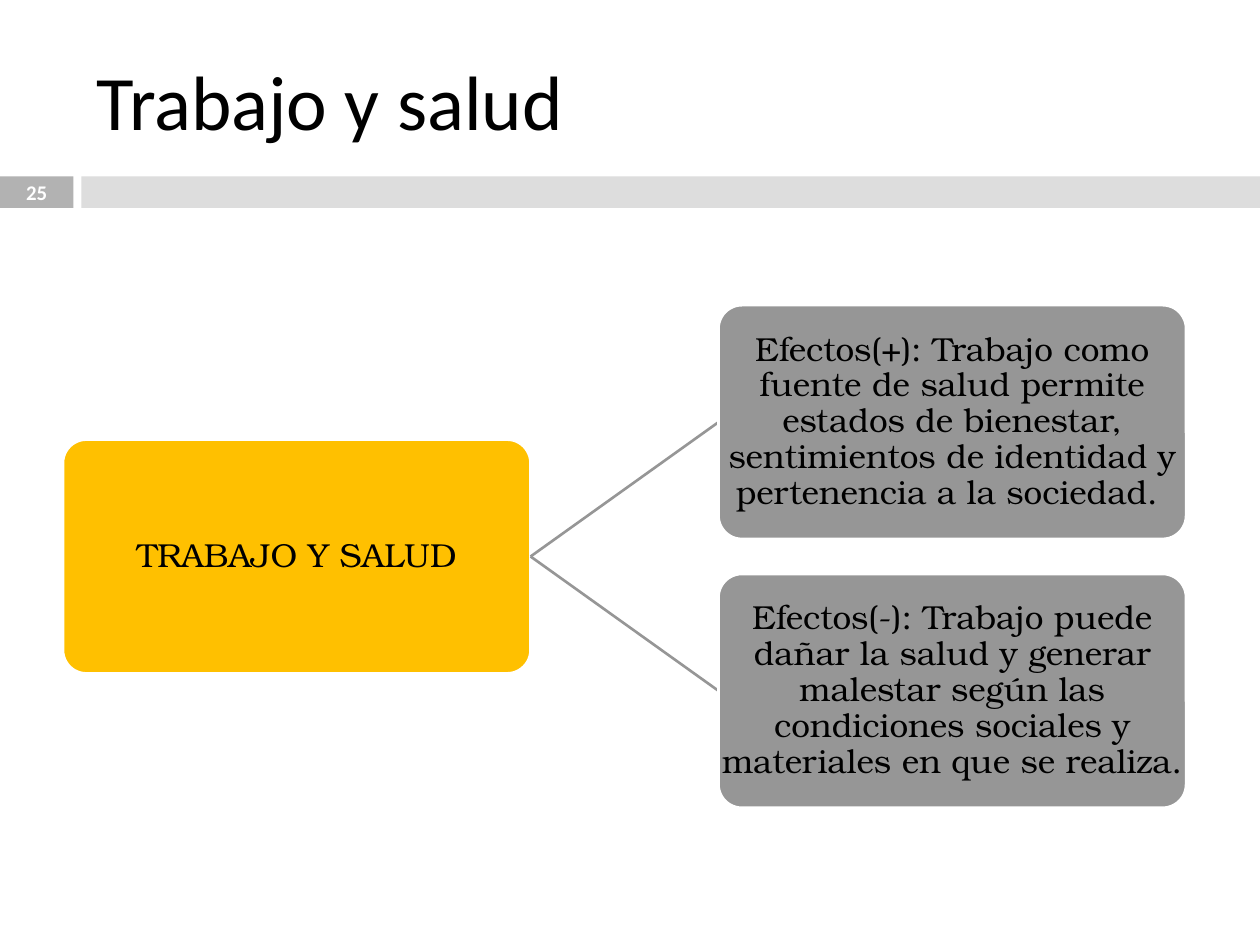
from dataclasses import dataclass

import pptx
import pptx.dml.color
import pptx.enum.shapes
import pptx.enum.text
import pptx.oxml.ns
import pptx.util
from lxml import etree

Pt = pptx.util.Pt
ALIGN = pptx.enum.text.PP_ALIGN
SHAPE = pptx.enum.shapes.MSO_SHAPE


@dataclass(frozen=True)
class Theme:
    heading_font: str = "Calibri"
    node_font: str = "TeX Gyre Bonum"
    title_size: float = 44
    node_size: float = 19
    number_size: float = 11.9
    text: str = "000000"
    white: str = "FFFFFF"
    number_band: str = "B2B2B2"
    band: str = "DDDDDD"
    root: str = "FFC000"
    effect: str = "969696"
    line_width: float = 1.5


THEME = Theme()

NODE_WIDTH, NODE_HEIGHT = 267.2, 133.6
ROOT_LEFT, EFFECT_LEFT = 36, 410.6
EFFECT_TOP, EFFECT_STEP = 174.4, 153.6

ROOT = "TRABAJO Y SALUD"
EFFECTS = [
    "Efectos(+): Trabajo como fuente de salud permite estados de bienestar, "
    "sentimientos de identidad y pertenencia a la sociedad. ",
    "Efectos(-): Trabajo puede dañar la salud y generar malestar según las "
    "condiciones sociales y materiales en que se realiza. ",
]


def rgb(code):
    return pptx.dml.color.RGBColor.from_string(code)


def add_block(slide, kind, left, top, width, height, fill):
    block = slide.shapes.add_shape(kind, Pt(left), Pt(top), Pt(width), Pt(height))
    block.shadow.inherit = False
    block.fill.solid()
    block.fill.fore_color.rgb = rgb(fill)
    block.line.fill.background()
    return block


def add_label(slide, text, left, top, width, height, font, size,
              color=THEME.text, bold=False, align=ALIGN.CENTER,
              inset=(7.2, 3.6), spacing=1.0):
    """Add vertically centred text; inset is (horizontal, vertical)."""
    label = slide.shapes.add_textbox(Pt(left), Pt(top), Pt(width), Pt(height))
    frame = label.text_frame
    frame.word_wrap = True
    frame.vertical_anchor = pptx.enum.text.MSO_ANCHOR.MIDDLE
    frame.margin_left = frame.margin_right = Pt(inset[0])
    frame.margin_top = frame.margin_bottom = Pt(inset[1])
    frame.text = text
    paragraph = frame.paragraphs[0]
    paragraph.alignment = align
    paragraph.line_spacing = spacing
    for run in paragraph.runs:
        run.font.name = font
        run.font.size = Pt(size)
        run.font.bold = bold
        run.font.color.rgb = rgb(color)


def add_node(slide, text, left, top, fill):
    box = (left, top, NODE_WIDTH, NODE_HEIGHT)
    node = add_block(slide, SHAPE.ROUNDED_RECTANGLE, *box, fill)
    node.adjustments[0] = 0.1
    node.line.color.rgb = rgb(THEME.white)
    node.line.width = Pt(THEME.line_width)
    add_label(slide, text, *box, THEME.node_font, THEME.node_size,
              inset=(0.96, 0.96), spacing=0.9)


def add_branch(slide, start_y, end_y):
    branch = slide.shapes.add_connector(
        pptx.enum.shapes.MSO_CONNECTOR.STRAIGHT,
        Pt(ROOT_LEFT + NODE_WIDTH), Pt(start_y), Pt(EFFECT_LEFT), Pt(end_y))
    branch.line.color.rgb = rgb(THEME.effect)
    branch.line.width = Pt(THEME.line_width)
    etree.SubElement(branch._element.spPr, pptx.oxml.ns.qn("a:effectLst"))


def add_header(slide):
    add_block(slide, SHAPE.RECTANGLE, 0, 100.8, 42, 18, THEME.number_band)
    add_block(slide, SHAPE.RECTANGLE, 46.5, 100.8, 673.5, 18, THEME.band)
    add_label(slide, "Trabajo y salud", 48, 18, 642, 78,
              THEME.heading_font, THEME.title_size, align=ALIGN.LEFT)
    add_label(slide, "25", 0, 100, 42, 19.6, THEME.heading_font,
              THEME.number_size, THEME.white, bold=True)


def add_tree(slide):
    root_top = EFFECT_TOP + EFFECT_STEP * (len(EFFECTS) - 1) / 2
    half = NODE_HEIGHT / 2
    add_node(slide, ROOT, ROOT_LEFT, root_top, THEME.root)
    for index, effect in enumerate(EFFECTS):
        top = EFFECT_TOP + index * EFFECT_STEP
        add_branch(slide, root_top + half, top + half)
        add_node(slide, effect, EFFECT_LEFT, top, THEME.effect)


def main():
    deck = pptx.Presentation()
    deck.slide_width, deck.slide_height = Pt(720), Pt(540)
    slide = deck.slides.add_slide(deck.slide_layouts[6])
    add_header(slide)
    add_tree(slide)
    deck.save("out.pptx")


if __name__ == "__main__":
    main()
